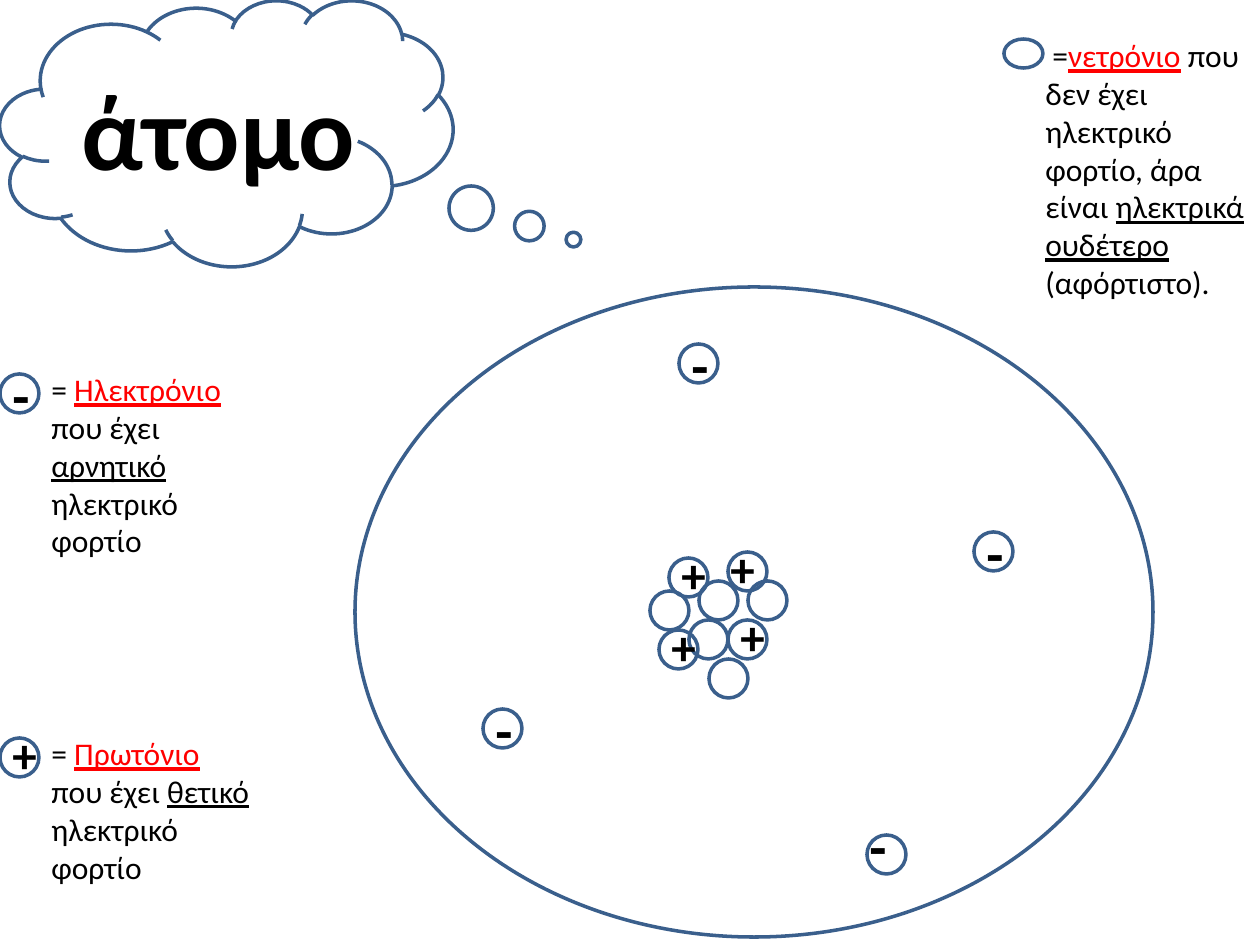
from pptx import Presentation
from pptx.dml.color import RGBColor
from pptx.enum.shapes import MSO_SHAPE
from pptx.enum.text import MSO_ANCHOR, MSO_AUTO_SIZE, PP_ALIGN
from pptx.util import Emu, Pt

OUTLINE = RGBColor(0x3A, 0x5F, 0x8C)
BLACK = RGBColor(0, 0, 0)
RED = RGBColor(0xFF, 0, 0)
EMU_PER_PX = 914400 / 126
PARTICLE = 39

presentation = Presentation()
presentation.slide_width = Emu(9144000)
presentation.slide_height = Emu(6858000)
slide = presentation.slides.add_slide(presentation.slide_layouts[5])


def outline(preset, *box):
    figure = slide.shapes.add_shape(preset, *[Emu(round(v * EMU_PER_PX)) for v in box])
    figure.fill.background()
    figure.line.color.rgb = OUTLINE
    figure.line.width = Pt(2)
    figure.shadow.inherit = False
    return figure


def write(holder, box, size, bold, runs):
    holder.left, holder.top, holder.width, holder.height = [
        Emu(round(v * EMU_PER_PX)) for v in box
    ]
    frame = holder.text_frame
    frame.word_wrap = True
    frame.auto_size = MSO_AUTO_SIZE.SHAPE_TO_FIT_TEXT
    frame.vertical_anchor = MSO_ANCHOR.TOP
    paragraph = frame.paragraphs[0]
    paragraph.alignment = PP_ALIGN.LEFT
    paragraph.font.name = "Calibri"
    paragraph.font.size = Pt(size)
    paragraph.font.bold = bold
    for words, color, underlined in runs:
        run = paragraph.add_run()
        run.text = words
        run.font.color.rgb = color
        if underlined:
            run.font.underline = True


thought = outline(MSO_SHAPE.CLOUD_CALLOUT, 0, 0, 453, 266)
thought.adjustments[0] = 0.766
thought.adjustments[1] = 0.401
write(slide.shapes.title, (69, 59, 335, 140), 60, True, [("άτομο", BLACK, False)])

outline(MSO_SHAPE.OVAL, 355, 287, 798, 650)

neutrons = [(689, 620), (748, 581), (699, 581), (650, 591), (709, 659)]
for left, top in neutrons:
    outline(MSO_SHAPE.OVAL, left, top, PARTICLE, PARTICLE)

charged = [
    ("+", 659, 630, 0, -20, 29),
    ("+", 669, 558, 0, -20, 29),
    ("+", 728, 552, -10, -20, 29),
    ("+", 728, 620, 0, -20, 49),
    ("-", 483, 709, 0, -20, 49),
    ("-", 679, 344, 0, -20, 49),
    ("-", 867, 835, -10, -30, 49),
    ("-", 974, 532, 0, -20, 49),
    ("-", 0, 374, 0, -20, 49),
    ("+", 0, 738, 0, -20, 49),
]
sign_sizes = {"+": (28, 72), "-": (32, 81)}
for sign, left, top, shift_x, shift_y, sign_width in charged:
    outline(MSO_SHAPE.OVAL, left, top, PARTICLE, PARTICLE)
    size, sign_height = sign_sizes[sign]
    sign_box = (left + shift_x, top + shift_y, sign_width, sign_height)
    write(slide.shapes.add_textbox(0, 0, 0, 0), sign_box, size, True, [(sign, BLACK, False)])

outline(MSO_SHAPE.OVAL, 1004, 39, PARTICLE, 29)

legend = [
    ((39, 364, 227, 204), [
        ("= ", BLACK, False),
        ("Ηλεκτρόνιο", RED, True),
        (" που έχει ", BLACK, False),
        ("αρνητικό", BLACK, True),
        (" ηλεκτρικό φορτίο", BLACK, False),
    ]),
    ((39, 728, 227, 165), [
        ("= ", BLACK, False),
        ("Πρωτόνιο", RED, True),
        (" που έχει ", BLACK, False),
        ("θετικό", BLACK, True),
        (" ηλεκτρικό φορτίο", BLACK, False),
    ]),
    ((1033, 30, 227, 280), [
        (" =", BLACK, False),
        ("νετρόνιο", RED, True),
        (" που δεν έχει ηλεκτρικό φορτίο, άρα είναι ", BLACK, False),
        ("ηλεκτρικά ουδέτερο ", BLACK, True),
        ("(αφόρτιστο).", BLACK, False),
    ]),
]
for box, runs in legend:
    write(slide.shapes.add_textbox(0, 0, 0, 0), box, 18, False, runs)

presentation.save("out.pptx")
